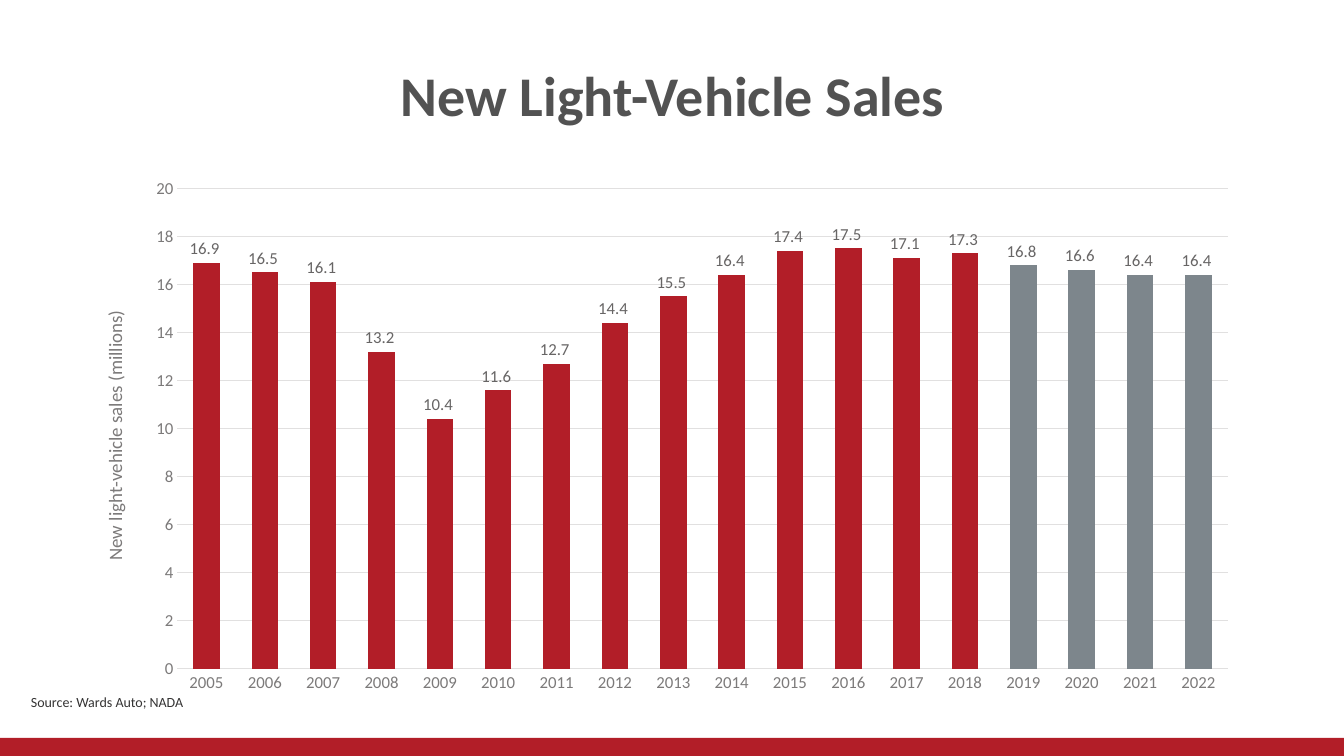
import pptx
import pptx.chart.data
import pptx.dml.color
import pptx.enum.chart
import pptx.enum.shapes
import pptx.enum.text
import pptx.oxml
import pptx.oxml.ns
import pptx.util

RGBColor = pptx.dml.color.RGBColor
RED = RGBColor(0xB2, 0x1E, 0x28)
SLATE = RGBColor(0x7D, 0x86, 0x8C)
TITLE_GRAY = RGBColor(0x52, 0x52, 0x52)
AXIS_GRAY = RGBColor(0x7C, 0x7A, 0x7A)
LABEL_GRAY = RGBColor(0x67, 0x65, 0x65)
GRID_GRAY = RGBColor(0xE1, 0xE0, 0xE0)
INK = RGBColor(0x34, 0x33, 0x33)
FONT = "Calibri"
Pt = pptx.util.Pt


def px(*lengths):
    """Turn pixels (100.8 to the inch) into EMU."""
    return [round(n * 914400 / 100.8) for n in lengths]


def style(font, size, color, bold=False):
    font.name, font.size, font.bold = FONT, Pt(size), bold
    font.color.rgb = color


prs = pptx.Presentation()
prs.slide_width, prs.slide_height = px(1344, 756)
s = prs.slides.add_slide(prs.slide_layouts[6])

# Footer band
band = s.shapes.add_shape(pptx.enum.shapes.MSO_SHAPE.RECTANGLE, *px(0, 738, 1344, 18))
band.shadow.inherit = False
band.fill.solid()
band.fill.fore_color.rgb = RED
band.line.fill.background()

# Title
tf = s.shapes.add_textbox(*px(93, 21, 1159, 146)).text_frame
tf.word_wrap = True
tf.vertical_anchor = pptx.enum.text.MSO_ANCHOR.MIDDLE
p = tf.paragraphs[0]
p.alignment = pptx.enum.text.PP_ALIGN.CENTER
r = p.add_run()
r.text = "New Light-Vehicle Sales"
style(r.font, 40, TITLE_GRAY, True)

# Sales chart
sales = [16.9, 16.5, 16.1, 13.2, 10.4, 11.6, 12.7, 14.4, 15.5,
         16.4, 17.4, 17.5, 17.1, 17.3, 16.8, 16.6, 16.4, 16.4]
first_year, first_forecast = 2005, 2019
data = pptx.chart.data.CategoryChartData()
data.categories = [str(first_year + i) for i in range(len(sales))]
data.add_series("Series 1", sales)
chart = s.shapes.add_chart(pptx.enum.chart.XL_CHART_TYPE.COLUMN_CLUSTERED,
                           *px(84, 167, 1167, 534), data).chart
chart.has_legend = False
chart.has_title = False
style(chart.font, 10, INK)

plot = chart.plots[0]
plot.gap_width, plot.overlap = 120, -27
plot.vary_by_categories = False
series = plot.series[0]
series.format.fill.solid()
series.format.fill.fore_color.rgb = RED
for i in range(first_forecast - first_year, len(sales)):
    fill = series.points[i].format.fill
    fill.solid()
    fill.fore_color.rgb = SLATE

labels = series.data_labels
labels.show_value = True
labels.position = pptx.enum.chart.XL_LABEL_POSITION.OUTSIDE_END
labels.number_format = r"#,##0.0_);[Red]\(#,##0.0\)"
labels.number_format_is_linked = False
style(labels.font, 12, LABEL_GRAY)

years, millions = chart.category_axis, chart.value_axis
for axis in (years, millions):
    axis.major_tick_mark = pptx.enum.chart.XL_TICK_MARK.NONE
    axis.minor_tick_mark = pptx.enum.chart.XL_TICK_MARK.NONE
    style(axis.tick_labels.font, 12, AXIS_GRAY)
millions.minimum_scale, millions.maximum_scale, millions.major_unit = 0, 20, 2
millions.format.line.fill.background()
for line in (years.format.line, millions.major_gridlines.format.line):
    line.color.rgb = GRID_GRAY
    line.width = Pt(0.75)

p = millions.axis_title.text_frame.paragraphs[0]
r = p.add_run()
r.text = "New light-vehicle sales (millions)"
style(r.font, 13.5, AXIS_GRAY)

# Fixed inner plot area, as fractions of the chart
plot_area = chart._chartSpace.chart.plotArea
for old in plot_area.findall(pptx.oxml.ns.qn("c:layout")):
    plot_area.remove(old)
plot_area.insert(0, pptx.oxml.parse_xml(
    f'<c:layout {pptx.oxml.ns.nsdecls("c")}><c:manualLayout>'
    '<c:layoutTarget val="inner"/><c:xMode val="edge"/><c:yMode val="edge"/>'
    '<c:x val="0.08"/><c:y val="0.04"/><c:w val="0.9"/><c:h val="0.9"/>'
    '</c:manualLayout></c:layout>'))

# Source line
tf = s.shapes.add_textbox(*px(21, 689, 217, 27)).text_frame
tf.word_wrap = True
r = tf.paragraphs[0].add_run()
r.text = "Source: Wards Auto; NADA"
style(r.font, 10, INK)

prs.save("out.pptx")
